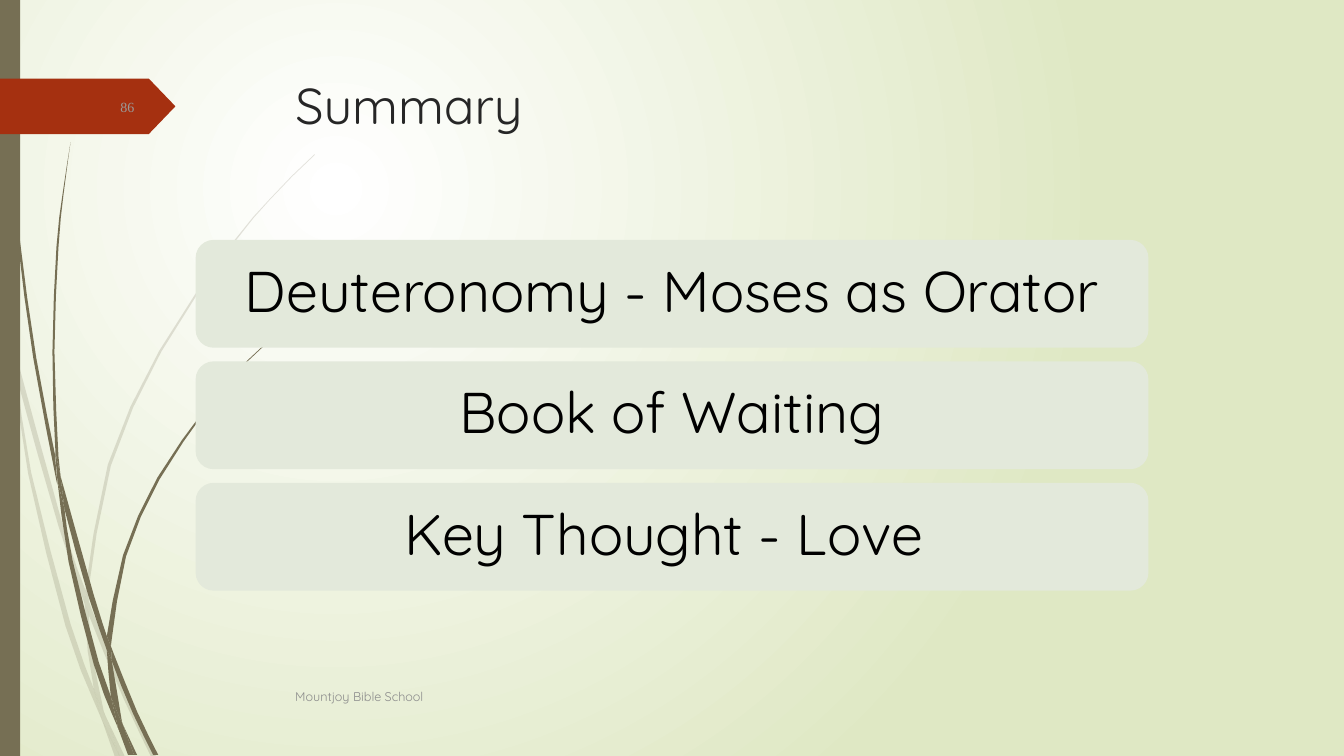
"""Builds the Summary slide: grass blades, page tag, title and three summary bars."""
from lxml import etree
from pptx import Presentation
from pptx.dml.color import RGBColor
from pptx.enum.shapes import MSO_SHAPE as SHAPE
from pptx.enum.text import MSO_ANCHOR as ANCHOR, PP_ALIGN as ALIGN
from pptx.oxml.ns import qn
from pptx.util import Inches, Pt

WHITE = RGBColor(0xFF, 0xFF, 0xFF)
PALE_GREEN = RGBColor(0xDF, 0xE8, 0xC4)
OLIVE = RGBColor(0x76, 0x6F, 0x54)
RUST = RGBColor(0xA5, 0x30, 0x10)
BAR = RGBColor(0xE3, 0xE9, 0xDB)
BLACK = RGBColor(0, 0, 0)
INK = RGBColor(0x26, 0x26, 0x26)
TAG_GREY = RGBColor(0x9B, 0x9A, 0x98)
FOOT_GREY = RGBColor(0x8C, 0x8C, 0x8C)

SUMMARY = ["Deuteronomy - Moses as Orator", "Book of Waiting", "Key Thought - Love "]
BAR_LEFT, BAR_TOP, BAR_W, BAR_H, BAR_STEP = 1.94, 2.38, 9.45, 1.07, 1.205
BAR_INSET, BAR_MARGIN = 0.05, 0.17
BAR_FONT = {"size": Pt(41), "name": "Quicksand", "color": BLACK}

LABELS = [
    ("Summary", (2.83, 0.69, 9.75, 1.4), ANCHOR.TOP, ALIGN.LEFT,
     {"size": Pt(36), "name": "Quicksand", "color": INK}),
    ("86", (0.58, 0.86, 0.85, 0.4), ANCHOR.MIDDLE, ALIGN.RIGHT,
     {"size": Pt(10), "name": "Times New Roman", "color": TAG_GREY}),
    ("Mountjoy Bible School", (2.83, 6.71, 8.33, 0.4), ANCHOR.MIDDLE, ALIGN.LEFT,
     {"size": Pt(9), "name": "Quicksand", "color": FOOT_GREY}),
]

FAINT_GRASS = [
    ([(0.11, 3.5), (0.09, 3.22), (0, 2.82)], [(0, 2.99), (0.1, 3.44)]),
    ([(0.14, 3.45), (0.17, 3.76), (0.58, 5.22), (0.84, 5.99)],
     [(0.85, 5.86), (0.62, 5.2), (0.14, 3.45)]),
    ([(0.88, 5.96), (0.88, 6.1), (1.23, 6.94), (1.5, 7.51)],
     [(1.55, 7.51), (1.27, 6.92), (0.92, 6.07)]),
    ([(1.05, 7.11), (1.19, 7.51)], [(1.24, 7.51)]),
    ([(0.11, 3.5), (0.28, 4.7), (0.65, 6.21), (0.92, 6.93), (1.01, 7.14)],
     [(0.99, 7.07), (0.93, 6.83), (0.7, 6.19), (0.31, 4.69), (0.17, 3.76)]),
    ([(0.84, 5.99), (0.87, 6.46), (0.93, 6.83), (0.96, 6.92), (1.05, 7.11)],
     [(1.03, 7.06), (0.91, 6.46), (0.88, 6.1), (0.88, 6.08)]),
    ([(3.12, 1.53), (2.89, 1.75), (2.68, 1.97), (2.28, 2.44), (1.58, 3.48), (1.07, 4.61),
      (0.85, 5.84), (0.85, 5.86)],
     [(0.88, 5.96), (0.88, 5.84), (1.1, 4.62), (1.6, 3.49), (2.29, 2.45), (2.68, 1.98),
      (2.9, 1.75), (3.12, 1.54)]),
    ([(1.01, 7.14), (1.14, 7.51)], [(1.19, 7.51)]),
    ([(0.88, 6.08), (0.88, 6.1), (0.88, 5.96)], [(0.85, 5.86), (0.84, 5.99)]),
    ([(0.93, 6.83), (0.99, 7.07), (1.01, 7.14), (1.19, 7.51)], [(1.05, 7.11), (0.96, 6.92)]),
]
DARK_GRASS = [
    ([(0.03, 0), (0.04, 0.48), (0.07, 1.1), (0.17, 2.33), (0.33, 3.55), (0.56, 4.77),
      (0.57, 4.81)],
     [(0.55, 4.57), (0.55, 4.53), (0.36, 3.55), (0.19, 2.32), (0.08, 1.09), (0.05, 0.48),
      (0.04, 0)]),
    ([(0.6, 4.72), (0.64, 5.05), (0.88, 5.92), (1.06, 6.45)],
     [(1.06, 6.33), (1.06, 6.31), (0.93, 5.9), (0.6, 4.72)]),
    ([(1.1, 6.41), (1.11, 6.56), (1.32, 7.08), (1.52, 7.49)],
     [(1.57, 7.49), (1.36, 7.06), (1.13, 6.49)]),
    ([(0.57, 4.77), (0.68, 5.57), (0.93, 6.59), (1.11, 7.08), (1.17, 7.22)],
     [(1.16, 7.17), (1.1, 6.91), (0.98, 6.57), (0.72, 5.56), (0.64, 5.05)]),
    ([(0.7, 1.41), (0.62, 1.93), (0.56, 2.45), (0.52, 3.49), (0.55, 4.49), (0.6, 4.72)],
     [(0.58, 4.53), (0.54, 3.49), (0.58, 2.45), (0.63, 1.93), (0.7, 1.41)]),
    ([(1.22, 7.19), (1.33, 7.49)], [(1.36, 7.49)]),
    ([(0.55, 4.49), (0.55, 4.53), (0.57, 4.77), (0.64, 5.05)], [(0.6, 4.72)]),
    ([(2.6, 3.44), (2.45, 3.58), (2.31, 3.73), (2.04, 4.05), (1.56, 4.74), (1.22, 5.51),
      (1.06, 6.31)],
     [(1.1, 6.41), (1.11, 6.33), (1.25, 5.52), (1.58, 4.76), (2.05, 4.06), (2.31, 3.74),
      (2.45, 3.59), (2.61, 3.44)]),
    ([(1.17, 7.22), (1.27, 7.49)], [(1.31, 7.49)]),
    ([(1.06, 6.45), (1.1, 6.91), (1.16, 7.06), (1.22, 7.19)],
     [(1.21, 7.16), (1.11, 6.56), (1.09, 6.51)]),
    ([(1.06, 6.31), (1.06, 6.45), (1.09, 6.51), (1.11, 6.56)], [(1.1, 6.41)]),
    ([(1.1, 6.91), (1.16, 7.17), (1.17, 7.22), (1.3, 7.49)],
     [(1.33, 7.49), (1.22, 7.19), (1.16, 7.06)]),
]


def box(at):
    return [Inches(v) for v in at]


def smooth(edge):
    padded = [edge[0], *edge, edge[-1]]
    curve = [edge[0]]
    for a, b, c, d in zip(padded, padded[1:], padded[2:], padded[3:]):
        if c[1] - b[1] > 0.4 or b[1] - c[1] > 0.4:
            curve.append(tuple((9 * (q + r) - p - e) / 16 for p, q, r, e in zip(a, b, c, d)))
        curve.append(c)
    return curve


def paint(sp, color):
    sp.shadow.inherit = False
    sp.fill.solid()
    sp.fill.fore_color.rgb = color
    sp.line.fill.background()
    return sp


def add_blade(s, edges, alpha=None):
    outline = [box(pt) for edge in edges for pt in smooth(edge)]
    builder = s.shapes.build_freeform(*outline[0])
    builder.add_line_segments(outline[1:], close=True)
    sp = paint(builder.convert_to_shape(), OLIVE)
    if alpha:
        clr = sp.element.spPr.find(qn("a:solidFill")).find(qn("a:srgbClr"))
        etree.SubElement(clr, qn("a:alpha"), val=str(alpha * 1000))


def add_preset(s, kind, at, color):
    return paint(s.shapes.add_shape(kind, *box(at)), color)


def add_label(s, text, at, anchor, align, font):
    tf = s.shapes.add_textbox(*box(at)).text_frame
    tf.word_wrap = True
    tf.vertical_anchor = anchor
    p = tf.paragraphs[0]
    p.alignment = align
    r = p.add_run()
    r.text = text
    for key, value in font.items():
        if key == "color":
            r.font.color.rgb = value
        else:
            setattr(r.font, key, value)
    return tf


def add_bar(s, text, top):
    add_preset(s, SHAPE.ROUNDED_RECTANGLE, (BAR_LEFT, top, BAR_W, BAR_H), BAR)
    at = (BAR_LEFT + BAR_INSET, top + BAR_INSET, BAR_W - 2 * BAR_INSET, BAR_H - 2 * BAR_INSET)
    tf = add_label(s, text, at, ANCHOR.MIDDLE, ALIGN.CENTER, BAR_FONT)
    for side in ("left", "right", "top", "bottom"):
        setattr(tf, f"margin_{side}", Inches(BAR_MARGIN))
    tf.paragraphs[0].line_spacing = 0.9


def set_background(s):
    fill = s.background.fill
    fill.gradient()
    for stop, color in zip(fill.gradient_stops, (WHITE, PALE_GREEN)):
        stop.color.rgb = color
    grad = next(s.element.iter(qn("a:gradFill")))
    circle = etree.Element(qn("a:path"), path="circle")
    etree.SubElement(circle, qn("a:fillToRect"), l="50000", t="50000", r="100000", b="100000")
    grad.replace(grad.find(qn("a:lin")), circle)


def main():
    prs = Presentation()
    prs.slide_width, prs.slide_height = Inches(13.33), Inches(7.5)
    s = prs.slides.add_slide(prs.slide_layouts[6])
    set_background(s)
    for edges in FAINT_GRASS:
        add_blade(s, edges, alpha=20)
    for edges in DARK_GRASS:
        add_blade(s, edges)
    add_preset(s, SHAPE.RECTANGLE, (0, 0, 0.2, 7.5), OLIVE)
    tag = add_preset(s, SHAPE.PENTAGON, (0, 0.78, 1.74, 0.55), RUST)
    tag.adjustments[0] = 0.48
    for i, text in enumerate(SUMMARY):
        add_bar(s, text, BAR_TOP + i * BAR_STEP)
    for label in LABELS:
        add_label(s, *label)
    prs.save("out.pptx")


if __name__ == "__main__":
    main()
